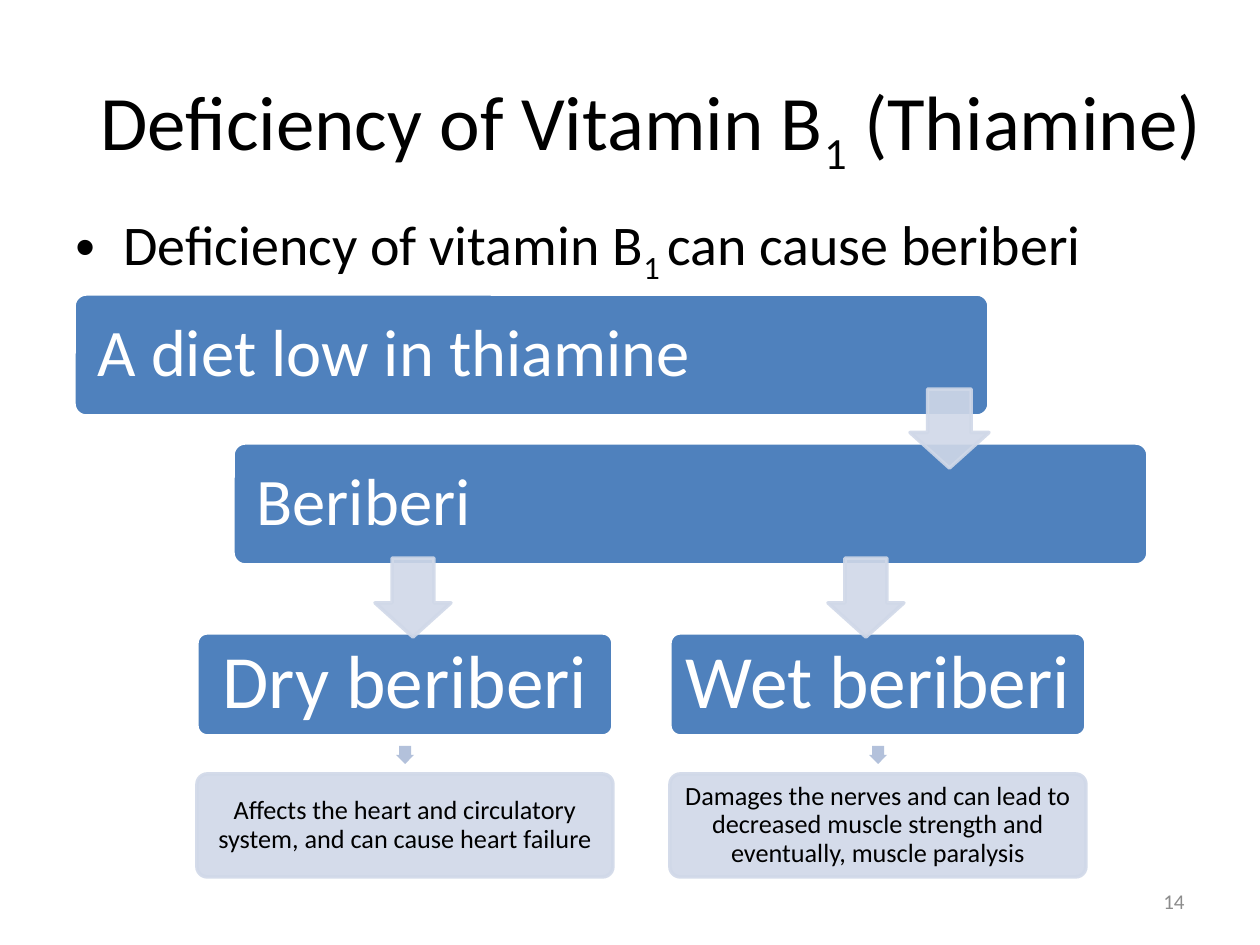
from lxml.etree import SubElement
from pptx import Presentation
from pptx.dml.color import RGBColor
from pptx.enum.shapes import MSO_SHAPE as Shape
from pptx.enum.text import MSO_ANCHOR as Anchor, PP_ALIGN as Align
from pptx.oxml.ns import qn
from pptx.util import Emu, Pt

PX_PER_INCH = 126
COLORS = {
    "blue": "4F81BD",
    "pale": "D0D8E8",
    "small_arrow": "B3C1DB",
    "white": "FFFFFF",
    "black": "000000",
    "gray": "8C8C8C",
}
OUTCOMES = [
    ("Dry beriberi",
     "Affects the heart and circulatory system, and can cause heart failure"),
    ("Wet beriberi",
     "Damages the nerves and can lead to decreased muscle strength and "
     "eventually, muscle paralysis"),
]


def px(length):
    return Emu(round(length * 914400 / PX_PER_INCH))


def rgb(name):
    return RGBColor.from_string(COLORS[name])


def apply_format(target, values):
    for attribute, value in values.items():
        setattr(target, attribute, value)


def write(frame, runs, size, color, align, inset=None, anchor=Anchor.MIDDLE):
    apply_format(frame, {"word_wrap": True, "vertical_anchor": anchor})
    if inset is not None:
        apply_format(frame, {f"margin_{side}": px(inset)
                             for side in ("left", "top", "right", "bottom")})
    paragraph = frame.paragraphs[0]
    paragraph.alignment = align
    for wording, is_subscript in runs:
        run = paragraph.add_run()
        run.text = wording
        apply_format(run.font, {"name": "Calibri", "size": Pt(size)})
        run.font.color.rgb = rgb(color)
        if is_subscript:
            run._r.get_or_add_rPr().set("baseline", "-25000")
    return paragraph


def add_text(slide, box, runs, size, color, align, anchor=Anchor.MIDDLE):
    frame = slide.shapes.add_textbox(*map(px, box)).text_frame
    return write(frame, runs, size, color, align, anchor=anchor)


def add_block(slide, kind, box, adjustments, fill, line=None):
    block = slide.shapes.add_shape(kind, *map(px, box))
    block.shadow.inherit = False
    for index, value in enumerate(adjustments):
        block.adjustments[index] = value
    block.fill.solid()
    block.fill.fore_color.rgb = rgb(fill)
    if line:
        block.line.color.rgb = rgb(line)
        block.line.width = Pt(2)
    else:
        block.line.fill.background()
    if fill == "pale":
        for tint in block._element.spPr.iter(qn("a:srgbClr")):
            SubElement(tint, qn("a:alpha")).set("val", "90000")
    return block


def add_card(slide, box, wording, size, inset, align=Align.CENTER, is_pale=False):
    fill, line, ink = (("pale", "pale", "black") if is_pale
                       else ("blue", "white", "white"))
    card = add_block(slide, Shape.ROUNDED_RECTANGLE, box, [0.1], fill, line)
    paragraph = write(card.text_frame, [(wording, False)], size, ink, align, inset)
    paragraph.line_spacing = 0.9


def add_down_arrow(slide, box):
    add_block(slide, Shape.DOWN_ARROW, box, [0.55, 0.45], "pale", "pale")


def add_causes(slide, left, top, width, height):
    card_width, card_height = 915, 122
    steps = ["A diet low in thiamine", "Beriberi"]
    for index, step in enumerate(steps):
        box = (left + index * (width - card_width),
               top + index * (height - card_height), card_width, card_height)
        add_card(slide, box, step, 38, 20, Align.LEFT)
    add_down_arrow(slide, (left + 836, top + 95, 79, 79))


def add_outcome(slide, left, top, width, height, name, effect):
    card_height, arrow = 103, 18
    add_card(slide, (left, top, width, card_height), name, 43, 8)
    small_arrow = add_block(
        slide, Shape.RIGHT_ARROW,
        (left + (width - arrow) / 2, top + (height - arrow) / 2, arrow, arrow),
        [0.667, 0.5], "small_arrow")
    small_arrow.rotation = 90
    add_card(slide, (left, top + height - card_height, width, card_height),
             effect, 15, 3, is_pale=True)


def add_outcomes(slide, left, top, width, height):
    column_width = 416
    step = width - column_width
    for index, (name, effect) in enumerate(OUTCOMES):
        add_outcome(slide, left + index * step, top, column_width, height, name, effect)
    for arrow_left in (left + 178, left + 631):
        add_down_arrow(slide, (arrow_left, top - 75, 76, 79))


def add_heading(slide, box):
    runs = [("Deficiency of Vitamin B", False), ("1", True), (" (Thiamine)", False)]
    add_text(slide, box, runs, 44, "black", Align.CENTER)


def add_summary(slide, box):
    runs = [("Deficiency of vitamin B", False), ("1 ", True),
            ("can cause beriberi", False)]
    summary = add_text(slide, box, runs, 32, "black", Align.LEFT, Anchor.TOP)
    summary.space_before = Pt(6.4)
    properties = summary._p.get_or_add_pPr()
    properties.set("marL", str(px(48)))
    properties.set("indent", str(px(-48)))
    SubElement(properties, qn("a:buFont")).set("typeface", "Arial")
    SubElement(properties, qn("a:buChar")).set("char", "•")


def add_page_number(slide, box):
    add_text(slide, box, [("14", False)], 12, "gray", Align.RIGHT)


def main():
    deck = Presentation()
    apply_format(deck, {"slide_width": px(1260), "slide_height": px(945)})
    slide = deck.slides.add_slide(deck.slide_layouts[6])
    add_causes(slide, 74, 294, 1074, 271)
    add_page_number(slide, (903, 876, 294, 50))
    add_outcomes(slide, 197, 633, 889, 244)
    add_heading(slide, (84, 47, 1134, 158))
    add_summary(slide, (63, 203, 1155, 624))
    deck.save("out.pptx")


if __name__ == "__main__":
    main()
